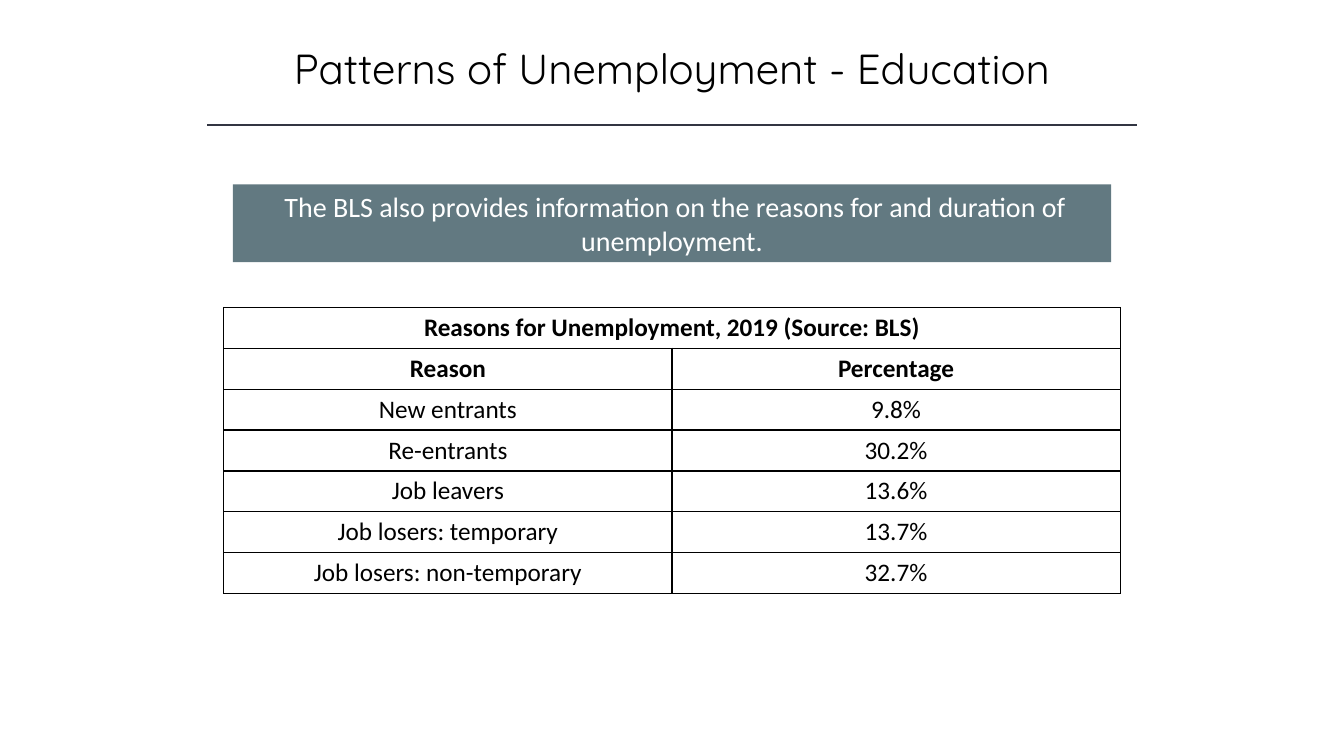
from dataclasses import dataclass

from lxml import etree
from pptx import Presentation
from pptx.dml.color import RGBColor
from pptx.enum.shapes import MSO_CONNECTOR, MSO_SHAPE
from pptx.enum.text import MSO_ANCHOR, MSO_AUTO_SIZE, PP_ALIGN
from pptx.oxml.ns import qn
from pptx.util import Inches, Pt

STRAIGHT = MSO_CONNECTOR.STRAIGHT
RECTANGLE = MSO_SHAPE.RECTANGLE
MIDDLE = MSO_ANCHOR.MIDDLE
NO_AUTOFIT = MSO_AUTO_SIZE.NONE
CENTER = PP_ALIGN.CENTER
TITLE_ONLY = 5

PAGE_WIDTH, PAGE_HEIGHT = Inches(13.33), Inches(7.5)


@dataclass(frozen=True)
class Theme:
    """Hold the colours, fonts and point sizes of the slide."""

    ink: str = "000000"
    paper: str = "FFFFFF"
    rule: str = "323542"
    banner: str = "627981"
    title_font: str = "Quicksand"
    body_font: str = "Calibri"
    title_size: int = 30
    banner_size: int = 20
    table_size: int = 18
    line_width: int = 1


THEME = Theme()
TITLE = "Patterns of Unemployment - Education"
BANNER = " The BLS also provides information on the reasons for and duration of unemployment."
TABLE_TITLE = "Reasons for Unemployment, 2019 (Source: BLS)"
TABLE_HEADS = ("Reason", "Percentage")
REASONS = (
    ("New entrants", "9.8%"),
    ("Re-entrants", "30.2%"),
    ("Job leavers", "13.6%"),
    ("Job losers: temporary", "13.7%"),
    ("Job losers: non-temporary", "32.7%"),
)


def centred(top, width, height):
    """Return the box of a horizontally centred element from inches."""
    width = Inches(width)
    return (PAGE_WIDTH - width) // 2, Inches(top), width, Inches(height)


def write(frame, text, font, size, color, bold=False):
    """Put one centred, formatted paragraph in a text frame."""
    frame.text = text
    frame.word_wrap = True
    para = frame.paragraphs[0]
    para.alignment = CENTER
    for span in para.runs:
        span.font.name = font
        span.font.size = Pt(size)
        span.font.bold = bold
        span.font.color.rgb = RGBColor.from_string(color)


def add_title(page, text):
    """Place and format the title placeholder."""
    title = page.shapes.title
    title.left, title.top, title.width, title.height = centred(0.37, 10, 0.61)
    write(title.text_frame, text, THEME.title_font, THEME.title_size, THEME.ink)
    title.text_frame.auto_size = NO_AUTOFIT
    title.text_frame.vertical_anchor = MIDDLE


def add_rule(page):
    """Draw the thin line under the title."""
    left, top, width, _ = centred(1.24, 9.22, 0)
    rule = page.shapes.add_connector(STRAIGHT, left, top, left + width, top)
    rule.line.color.rgb = RGBColor.from_string(THEME.rule)
    rule.line.width = Pt(THEME.line_width)
    etree.SubElement(rule.element.spPr, qn("a:effectLst"))


def add_banner(page, text):
    """Add the filled statement box."""
    banner = page.shapes.add_shape(RECTANGLE, *centred(1.83, 8.71, 0.77))
    banner.shadow.inherit = False
    banner.fill.solid()
    banner.fill.fore_color.rgb = RGBColor.from_string(THEME.banner)
    banner.line.fill.background()
    banner.text_frame.vertical_anchor = MIDDLE
    write(banner.text_frame, text, THEME.body_font, THEME.banner_size, THEME.paper)


def set_borders(cell):
    """Outline all four sides of a table cell."""
    properties = cell._tc.get_or_add_tcPr()
    for side in ("a:lnL", "a:lnR", "a:lnT", "a:lnB"):
        border = etree.SubElement(properties, qn(side), w=str(Pt(THEME.line_width)))
        fill = etree.SubElement(border, qn("a:solidFill"))
        etree.SubElement(fill, qn("a:srgbClr"), val=THEME.ink)


def add_reasons_table(page):
    """Add the table of reasons under a merged heading row."""
    rows = ((TABLE_TITLE, ""), TABLE_HEADS, *REASONS)
    box = centred(3.05, 8.89, 2.84)
    table = page.shapes.add_table(len(rows), len(TABLE_HEADS), *box).table
    table.first_row = table.horz_banding = False
    for row_index, row in enumerate(rows):
        for column_index, text in enumerate(row):
            cell = table.cell(row_index, column_index)
            set_borders(cell)
            cell.fill.background()
            write(cell.text_frame, text, THEME.body_font, THEME.table_size,
                  THEME.ink, bold=row_index < 2)
    table.cell(0, 0).merge(table.cell(0, len(TABLE_HEADS) - 1))


def main():
    """Build the slide and save the deck."""
    deck = Presentation()
    deck.slide_width, deck.slide_height = PAGE_WIDTH, PAGE_HEIGHT
    page = deck.slides.add_slide(deck.slide_layouts[TITLE_ONLY])
    add_title(page, TITLE)
    add_rule(page)
    add_banner(page, BANNER)
    add_reasons_table(page)
    deck.save("out.pptx")


if __name__ == "__main__":
    main()
